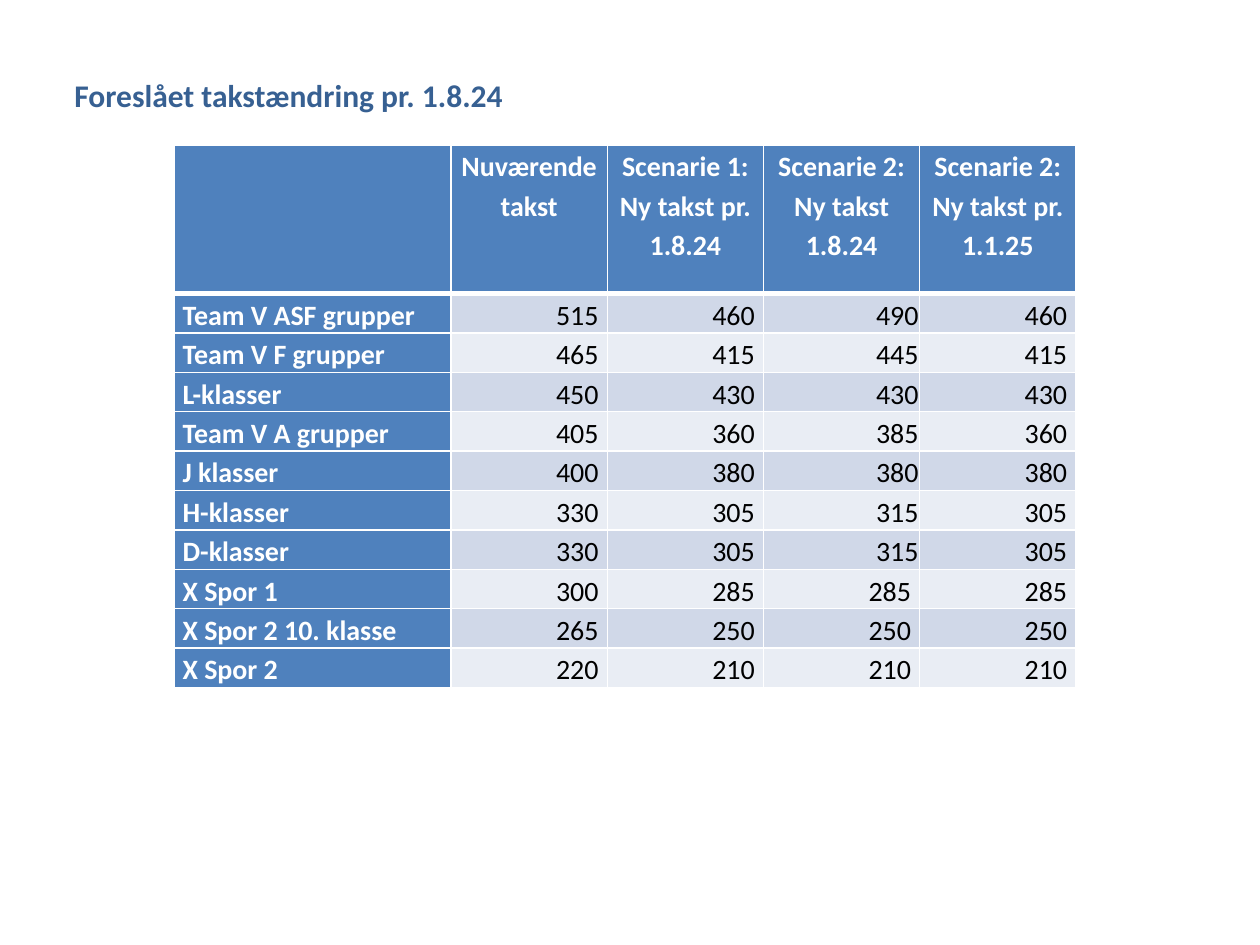
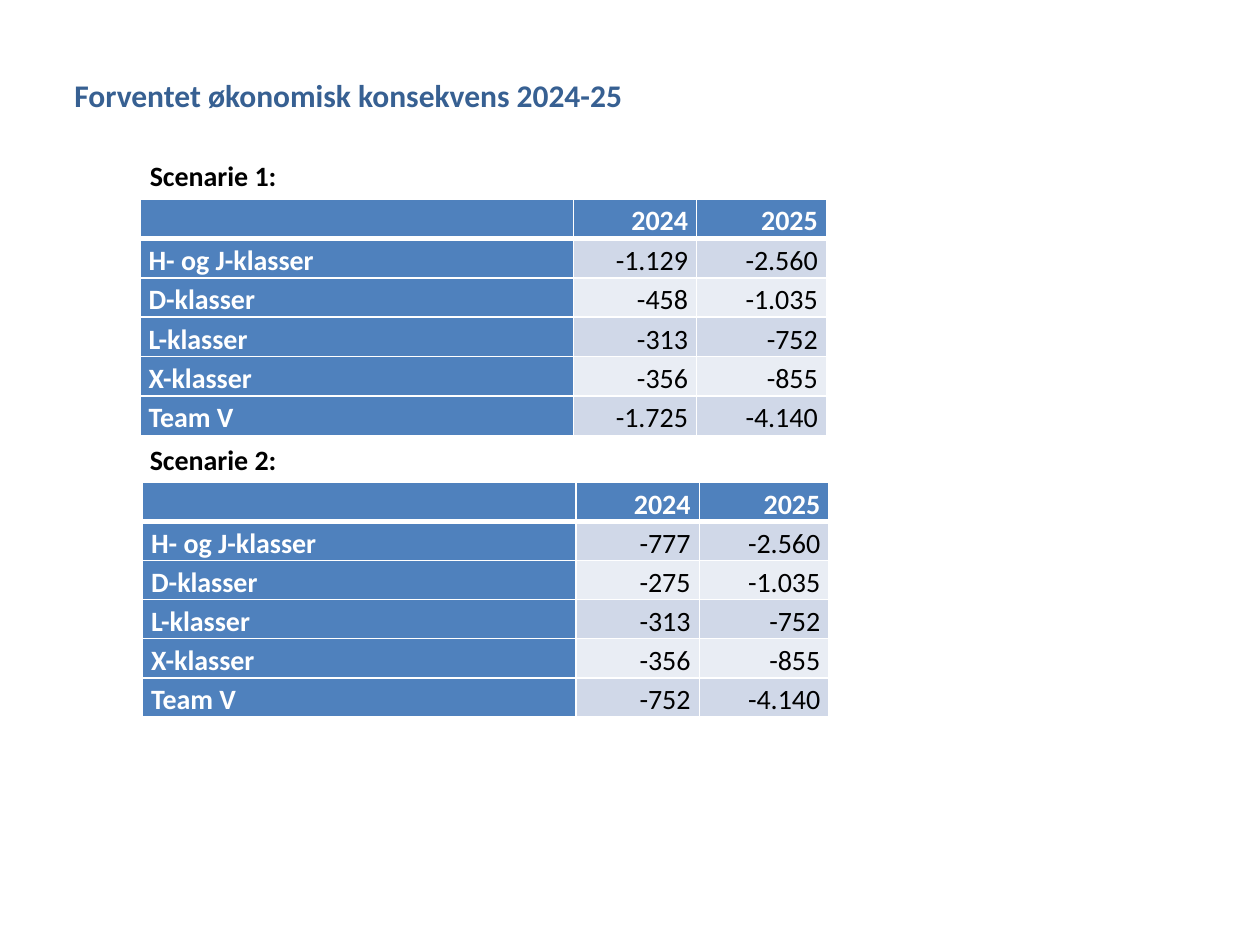
from lxml import etree
from pptx import Presentation
from pptx.dml.color import RGBColor
from pptx.enum import text as t
from pptx.oxml import ns
from pptx.util import Inches, Pt

BLUE = RGBColor(0x4F, 0x81, 0xBD)
TITLE_BLUE = RGBColor(0x37, 0x60, 0x92)
BANDS = [RGBColor(0xD0, 0xD8, 0xE8), RGBColor(0xE9, 0xED, 0xF4)]
WHITE = RGBColor(0xFF, 0xFF, 0xFF)
BLACK = RGBColor(0, 0, 0)
FONT = "Calibri"
LEFT, CENTER, RIGHT = t.PP_ALIGN.LEFT, t.PP_ALIGN.CENTER, t.PP_ALIGN.RIGHT


def write(frame, content, size=16, color=BLACK, bold=False, align=LEFT, spacing=1.0):
    for index, line in enumerate(content.split("\n")):
        paragraph = frame.paragraphs[0] if index == 0 else frame.add_paragraph()
        paragraph.alignment = align
        paragraph.line_spacing = spacing
        paragraph.space_before = Pt(0)
        run = paragraph.add_run()
        run.text = line
        run.font.name, run.font.size = FONT, Pt(size)
        run.font.bold, run.font.color.rgb = bold, color


def add_banded_table(slide, left, top, widths, header_height, header_align, rows, tight_cells=()):
    row_height = 0.31
    height = header_height + row_height * (len(rows) - 1)
    table = slide.shapes.add_table(len(rows), len(widths), Inches(left), Inches(top),
                                   Inches(sum(widths)), Inches(height)).table
    for column, width in zip(table.columns, widths):
        column.width = Inches(width)
    for r, values in enumerate(rows):
        table.rows[r].height = Inches(row_height if r else header_height)
        for c, value in enumerate(values):
            cell = table.cell(r, c)
            is_label = r == 0 or c == 0
            is_tight = (r, c) in tight_cells
            cell.margin_left = cell.margin_right = Inches(0.01 if is_tight else 0.07)
            cell.margin_top = Inches(0.01 if is_tight else 0)
            cell.margin_bottom = 0
            cell.vertical_anchor = t.MSO_ANCHOR.BOTTOM if is_tight else t.MSO_ANCHOR.TOP

            # White grid, with a thicker rule under the header
            properties = cell._tc.get_or_add_tcPr()
            for side in ("lnL", "lnR", "lnT", "lnB"):
                thick = (r, side) in ((0, "lnB"), (1, "lnT"))
                border = etree.SubElement(properties, ns.qn(f"a:{side}"), w=str(Pt(3 if thick else 1)))
                fill = etree.SubElement(border, ns.qn("a:solidFill"))
                etree.SubElement(fill, ns.qn("a:srgbClr"), val=str(WHITE))
            cell.fill.solid()
            cell.fill.fore_color.rgb = BLUE if is_label else BANDS[(r - 1) % 2]

            if value:
                align = header_align if r == 0 else LEFT if c == 0 else RIGHT
                write(cell.text_frame, value, color=WHITE if is_label else BLACK, bold=is_label,
                      align=align, spacing=1.0 if is_tight else 1.15)


presentation = Presentation()
presentation.slide_width, presentation.slide_height = Inches(10), Inches(7.5)

# Slides and their titles
slides = []
for heading in ("Foreslået takstændring pr. 1.8.24", "Forventet økonomisk konsekvens 2024-25"):
    slide = presentation.slides.add_slide(presentation.slide_layouts[5])
    title = slide.shapes.title
    title.left, title.top, title.width, title.height = map(Inches, (0.59, 0.6, 5.98, 0.47))
    frame = title.text_frame
    frame.margin_left = frame.margin_right = frame.margin_top = frame.margin_bottom = 0
    frame.vertical_anchor = t.MSO_ANCHOR.TOP
    frame.auto_size = t.MSO_AUTO_SIZE.NONE
    write(frame, heading, size=18, color=TITLE_BLUE, bold=True)
    slides.append(slide)
rates_slide, economy_slide = slides

# Proposed rates
rates = [
    ("", "Nuværende takst", "Scenarie 1:\nNy takst pr. 1.8.24",
     "Scenarie 2: Ny takst 1.8.24", "Scenarie 2: Ny takst pr. 1.1.25"),
    ("Team V ASF grupper", "515", "460", "490", "460"),
    ("Team V F grupper", "465", "415", "445", "415"),
    ("L-klasser", "450", "430", "430", "430"),
    ("Team V A grupper", "405", "360", "385", "360"),
    ("J klasser", "400", "380", "380", "380"),
    ("H-klasser", "330", "305", "315", "305"),
    ("D-klasser", "330", "305", "315", "305"),
    ("X Spor 1", "300", "285", "285", "285"),
    ("X Spor 2 10. klasse", "265", "250", "250", "250"),
    ("X Spor 2", "220", "210", "210", "210"),
]
add_banded_table(rates_slide, 1.38, 1.15, [2.2] + [1.24] * 4, 1.18, CENTER, rates,
                 tight_cells=[(r, 3) for r in range(1, 8)])

# Expected economic effect, one table per scenario
groups = ["", "H- og J-klasser", "D-klasser", "L-klasser", "X-klasser", "Team V"]
effect_2025 = ["2025", "-2.560", "-1.035", "-752", "-855", "-4.140"]
scenarios = [
    ("Scenarie 1:", 1.11, 1.58, ["2024", "-1.129", "-458", "-313", "-356", "-1.725"]),
    ("Scenarie 2:", 1.13, 3.83, ["2024", "-777", "-275", "-313", "-356", "-752"]),
]
for caption, left, top, effect_2024 in scenarios:
    add_banded_table(economy_slide, left, top, [3.44, 0.98, 1.03], 0.31, RIGHT,
                     list(zip(groups, effect_2024, effect_2025)))
    box = economy_slide.shapes.add_textbox(Inches(1.09), Inches(top - 0.37), Inches(3.62), Inches(0.37))
    box.text_frame.word_wrap = True
    write(box.text_frame, caption, bold=True)

presentation.save("out.pptx")
